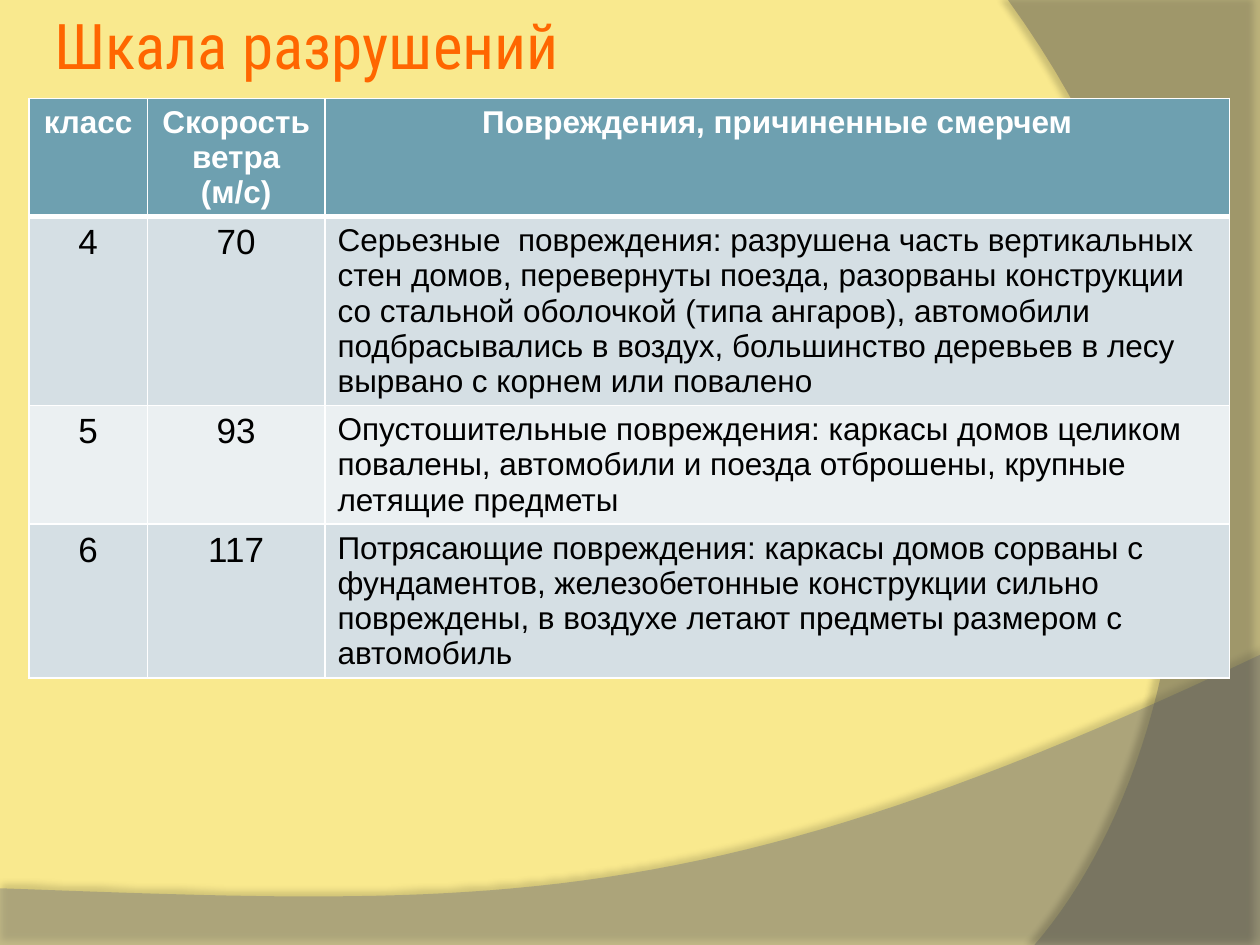
from lxml import etree
from pptx import Presentation
from pptx import util as u
from pptx.dml.color import RGBColor
from pptx.enum import text
from pptx.oxml.ns import qn

prs = Presentation()
prs.slide_width, prs.slide_height = u.Inches(10), u.Inches(7.5)
W, H = prs.slide_width, prs.slide_height


def paint(fill, color, alpha=None):
    fill.solid()
    fill.fore_color.rgb = RGBColor.from_string(color)
    if alpha:
        clr = fill._xPr.find(qn("a:solidFill"))[0]
        etree.SubElement(clr, qn("a:alpha"), val=str(alpha * 1000))


def add_run(p, words, font, size, color, bold=False):
    r = p.add_run()
    r.text = words
    r.font.name, r.font.size, r.font.bold = font, u.Pt(size), bold
    paint(r.font.fill, color)


s = prs.slides.add_slide(prs.slide_layouts[5])
paint(s.background.fill, "F9E98E")

waves = [
    ([(0, 0.94), (0, 1), (1, 1)],
     [(1, 0.693), (0.559, 0.972), (0.391, 0.959), (0, 0.94)],
     "7F7F7F", 45, 35, 3.5, 270),
    ([(1, 0), (1, 1)],
     [(0.821, 1), (0.935, 0.825), (1.018, 0.4), (0.8, 0)],
     "5E5E5E", 40, 45, 4, 180),
]
steps = 48
for corners, curve, color, alpha, shade, dist, angle in waves:
    pts = list(corners)
    for i in range(steps + 1):
        t = i / steps
        weights = ((1 - t) ** 3, 3 * t * (1 - t) ** 2, 3 * t * t * (1 - t), t ** 3)
        pts.append(tuple(sum(k * c[axis] for k, c in zip(weights, curve)) for axis in (0, 1)))
    pts = [(x * W, y * H) for x, y in pts]
    fb = s.shapes.build_freeform(*pts[0])
    fb.add_line_segments(pts[1:], close=True)
    sp = fb.convert_to_shape()
    paint(sp.fill, color, alpha)
    sp.line.fill.background()
    sp.shadow.inherit = False
    shadow = etree.SubElement(
        sp._element.spPr.find(qn("a:effectLst")), qn("a:outerShdw"),
        blurRad=str(u.Pt(4)), dist=str(u.Pt(dist)), dir=str(angle * 60000),
        algn="ctr", rotWithShape="0")
    clr = etree.SubElement(shadow, qn("a:srgbClr"), val="000000")
    etree.SubElement(clr, qn("a:alpha"), val=str(shade * 1000))

title = s.shapes.title
s.shapes._spTree.append(title._element)
title.left, title.top, title.width, title.height = 0, 0, W, u.Inches(0.7)
tf = title.text_frame
tf.margin_left = u.Inches(0.43)
tf.vertical_anchor = text.MSO_ANCHOR.MIDDLE
tf.auto_size = text.MSO_AUTO_SIZE.NONE
p = tf.paragraphs[0]
p.alignment = text.PP_ALIGN.LEFT
add_run(p, "Шкала разрушений", "Roboto Condensed", 36, "FF6600")

rows = [
    ("класс", "Скорость ветра (м/с)", "Повреждения, причиненные смерчем"),
    ("4", "70", "Серьезные  повреждения: разрушена часть вертикальных стен домов, "
     "перевернуты поезда, разорваны конструкции со стальной оболочкой (типа ангаров), "
     "автомобили подбрасывались в воздух, большинство деревьев в лесу вырвано с корнем "
     "или повалено"),
    ("5", "93", "Опустошительные повреждения: каркасы домов целиком повалены, "
     "автомобили и поезда отброшены, крупные летящие предметы"),
    ("6", "117", "Потрясающие повреждения: каркасы домов сорваны с фундаментов, "
     "железобетонные конструкции сильно повреждены, в воздухе летают предметы размером "
     "с автомобиль"),
]
widths = [0.94, 1.41, 7.18]
heights = [0.94, 1.5, 0.94, 1.22]
fills = ["6EA0B0", "D5DFE4", "EBF0F2", "D5DFE4"]
tbl = s.shapes.add_table(
    len(rows), len(widths), u.Inches(0.23), u.Inches(0.78),
    u.Inches(sum(widths)), u.Inches(sum(heights))).table
for col, width in zip(tbl.columns, widths):
    col.width = u.Inches(width)
for i, row in enumerate(rows):
    tbl.rows[i].height = u.Inches(heights[i])
    for j, words in enumerate(row):
        cell = tbl.cell(i, j)
        tcPr = cell._tc.get_or_add_tcPr()
        for side in ("lnL", "lnR", "lnT", "lnB"):
            thick = (i, side) in ((0, "lnB"), (1, "lnT"))
            ln = etree.SubElement(tcPr, qn("a:" + side), w=str(u.Pt(3 if thick else 1)))
            line_fill = etree.SubElement(ln, qn("a:solidFill"))
            etree.SubElement(line_fill, qn("a:srgbClr"), val="FFFFFF")
        paint(cell.fill, fills[i])
        header, body = i == 0, j == 2
        p = cell.text_frame.paragraphs[0]
        p.alignment = text.PP_ALIGN.LEFT if body and not header else text.PP_ALIGN.CENTER
        add_run(p, words, "Arial", 18 if header or body else 20,
                "FFFFFF" if header else "000000", header)

prs.save("out.pptx")
